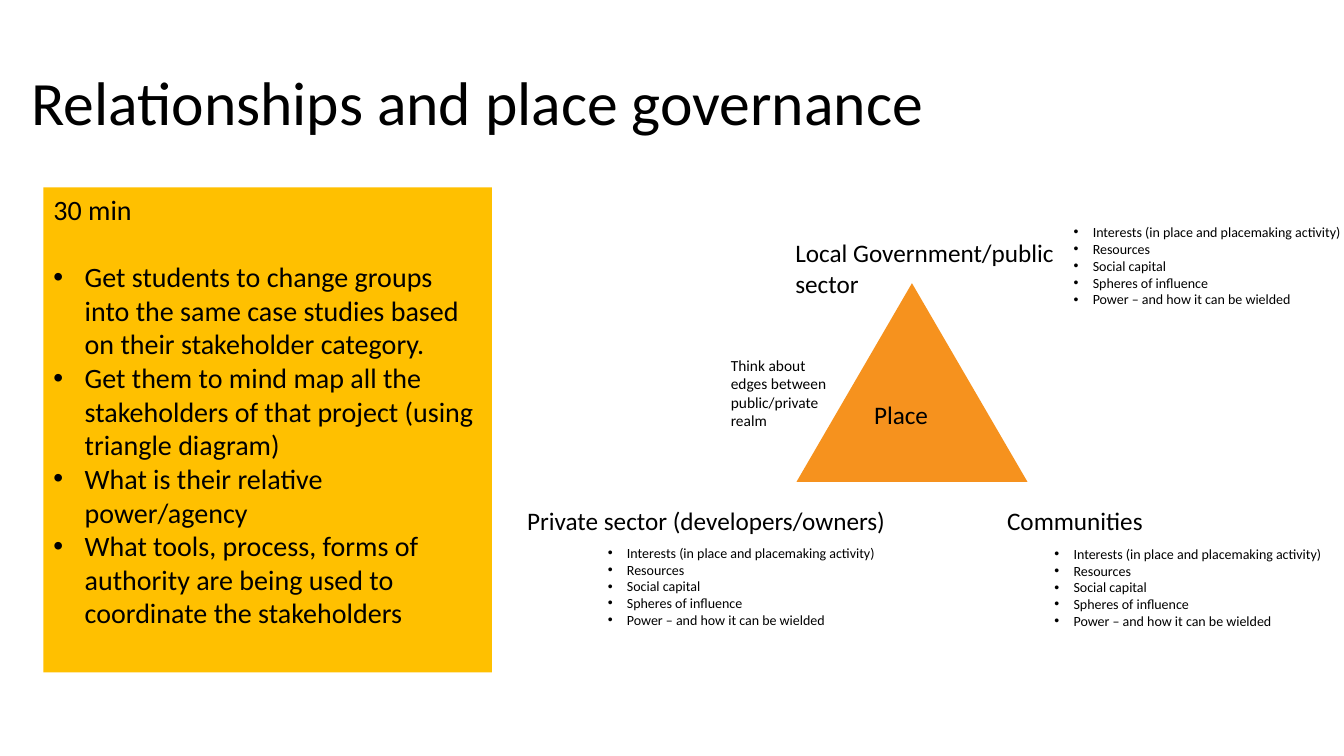
from pptx import Presentation
from pptx.dml.color import RGBColor
from pptx.enum.shapes import MSO_SHAPE
from pptx.enum.text import MSO_ANCHOR, MSO_AUTO_SIZE, PP_ALIGN
from pptx.oxml.ns import qn
from pptx.util import Inches, Pt
from lxml.etree import SubElement

COLORS = {"text": "000000", "panel": "FFC000", "place": "F6921E"}


def place(shape, box):
    shape.left, shape.top, shape.width, shape.height = map(Inches, box)


def write(shape, lines, size, indent=0, plain=0):
    """Fill a shape with lines; those after the first `plain` get bullets if indented."""
    frame = shape.text_frame
    frame.word_wrap = True
    frame.auto_size = MSO_AUTO_SIZE.NONE
    frame.text = "\n".join(lines)
    for i, par in enumerate(frame.paragraphs):
        props = par._p.get_or_add_pPr()
        inset = indent if i >= plain else 0
        props.set("marL", str(Inches(inset)))
        props.set("indent", str(-Inches(inset)))
        if inset:
            SubElement(props, qn("a:buFont")).set("typeface", "Arial")
            SubElement(props, qn("a:buChar")).set("char", "•")
        else:
            SubElement(props, qn("a:buNone"))
        par.alignment = PP_ALIGN.LEFT
        par.space_before = Pt(0)
        for run in par.runs:
            run.font.name = "Calibri"
            run.font.size = Pt(size)
            run.font.color.rgb = RGBColor.from_string(COLORS["text"])


deck = Presentation()
deck.slide_width = Inches(13.33)
deck.slide_height = Inches(7.5)
slide = deck.slides.add_slide(deck.slide_layouts[1])
shapes = slide.shapes

# Title
title = shapes.title
place(title, (0.21, 0.32, 11.5, 1.45))
write(title, ["Relationships and place governance"], 44)
title.text_frame.vertical_anchor = MSO_ANCHOR.MIDDLE
title.text_frame.paragraphs[0].line_spacing = 0.9

# Task panel
panel = slide.placeholders[1]
place(panel, (0.43, 1.86, 4.45, 4.81))
panel.fill.solid()
panel.fill.fore_color.rgb = RGBColor.from_string(COLORS["panel"])
tasks = [
    "30 min",
    "Get students to change groups into the same case studies based on their stakeholder category.",
    "Get them to mind map all the stakeholders of that project (using triangle diagram)",
    "What is their relative power/agency",
    "What tools, process, forms of authority are being used to coordinate the stakeholders",
]
write(panel, tasks, 20, indent=0.31, plain=1)
panel.text_frame.paragraphs[1].space_before = Pt(24)

# Place triangle
peak = shapes.add_shape(MSO_SHAPE.ISOSCELES_TRIANGLE, Inches(7.9), Inches(2.81),
                        Inches(2.29), Inches(1.97))
peak.shadow.inherit = False
peak.fill.solid()
peak.fill.fore_color.rgb = RGBColor.from_string(COLORS["place"])
peak.line.fill.background()

# Labels around the triangle
labels = [
    ("Local Government/public sector", 18, (7.79, 2.31, 3.2, 0.71)),
    ("Private sector (developers/owners)", 18, (5.13, 4.96, 4.16, 0.4)),
    ("Communities", 18, (9.89, 4.96, 3.2, 0.4)),
    ("Place", 18, (8.57, 3.91, 0.95, 0.4)),
    ("Think about edges between public/private realm", 11, (7.15, 3.48, 1.28, 0.84)),
]
for text, size, box in labels:
    write(shapes.add_textbox(*map(Inches, box)), [text], size)

# The same prompts beside each corner
prompts = [
    "Interests (in place and placemaking activity)",
    "Resources",
    "Social capital",
    "Spheres of influence",
    "Power – and how it can be wielded",
]
for left, top in [(10.55, 2.17), (10.36, 5.36), (5.93, 5.35)]:
    note = shapes.add_textbox(Inches(left), Inches(top), Inches(4.33), Inches(0.94))
    write(note, prompts, 10, indent=0.19)

deck.save("out.pptx")
